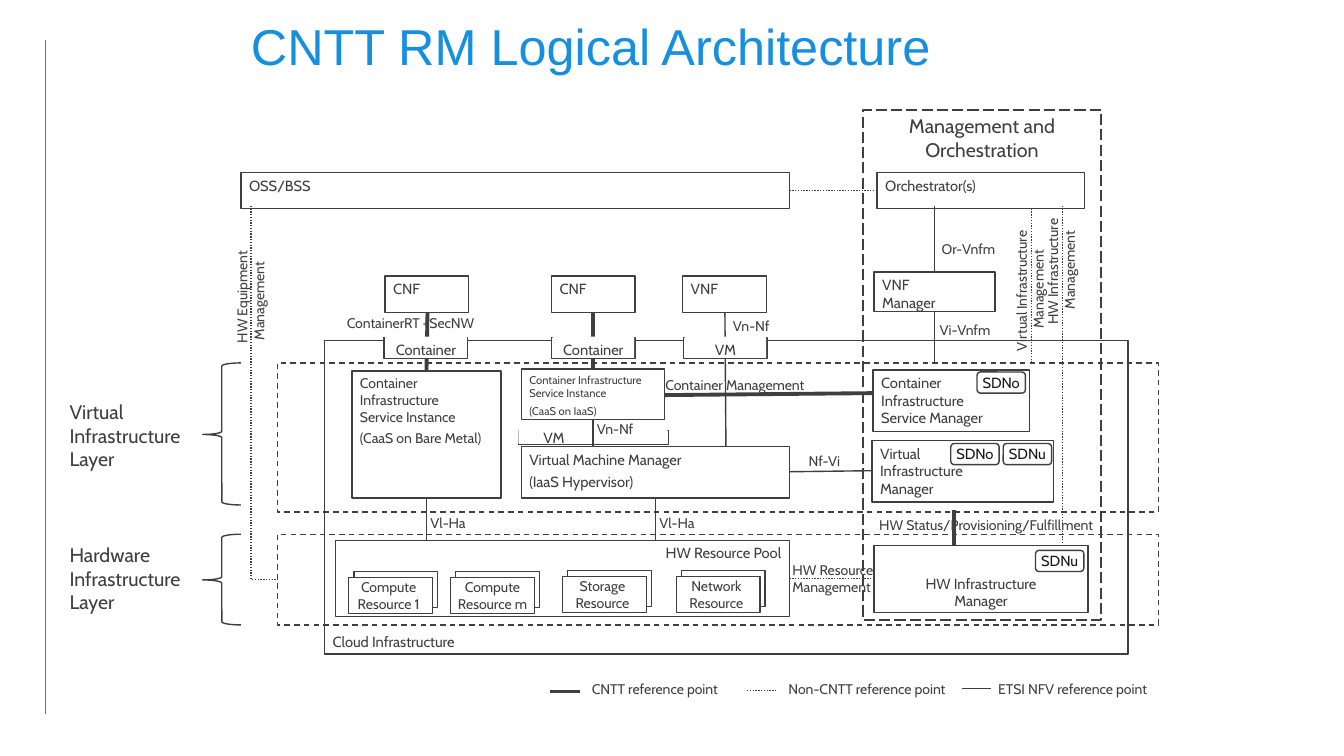
from pptx import Presentation
from pptx import util as u
from pptx.dml.color import RGBColor
from pptx.enum import dml, shapes, text
from lxml import etree

PX = 9144
INK = RGBColor(0x3F, 0x3F, 0x3F)
BLACK = RGBColor(0x18, 0x18, 0x18)
BLUE = RGBColor(0x16, 0x8F, 0xDF)
WHITE = RGBColor(0xFF, 0xFF, 0xFF)
A = "http://schemas.openxmlformats.org/drawingml/2006/main"
SHAPE = shapes.MSO_SHAPE
DOT, DASH = dml.MSO_LINE.ROUND_DOT, dml.MSO_LINE.DASH
LEFT, CENTER, RIGHT = text.PP_ALIGN.LEFT, text.PP_ALIGN.CENTER, text.PP_ALIGN.RIGHT
TOP, MIDDLE, BOTTOM = text.MSO_ANCHOR.TOP, text.MSO_ANCHOR.MIDDLE, text.MSO_ANCHOR.BOTTOM
THICK = 2.75


def write(sp, paragraphs, size, align, anchor, inset, wrap, color=INK, font="Cabin"):
    """Fill a shape with paragraphs in one style."""
    tf = sp.text_frame
    tf.word_wrap = wrap
    tf.vertical_anchor = anchor
    tf.margin_left, tf.margin_top, tf.margin_right, tf.margin_bottom = [i * PX for i in inset]
    for n, line in enumerate(paragraphs):
        p = tf.add_paragraph() if n else tf.paragraphs[0]
        p.text = line
        p.alignment = align
        if n and wrap:
            p.space_before = u.Pt(3)
        p.font.size = u.Pt(size)
        p.font.name = font
        p.font.color.rgb = color


def box(s, x, y, w, h, *paragraphs, size=10.5, align=LEFT, anchor=TOP, inset=(8, 4, 8, 4),
        fill=None, line=INK, dash=None, kind=SHAPE.RECTANGLE, color=INK):
    """Draw a preset shape with optional text."""
    sp = s.shapes.add_shape(kind, x * PX, y * PX, w * PX, h * PX)
    sp.shadow.inherit = False
    if fill is None:
        sp.fill.background()
    else:
        sp.fill.solid()
        sp.fill.fore_color.rgb = fill
    if line is None:
        sp.line.fill.background()
    else:
        sp.line.color.rgb = line
        sp.line.width = u.Pt(1)
        sp.line.dash_style = dash
    write(sp, paragraphs, size, align, anchor, inset, True, color)
    return sp


def label(s, x, y, w, h, *paragraphs, size=10, align=LEFT, turn=0):
    """Place an unwrapped text label."""
    sp = s.shapes.add_textbox(x * PX, y * PX, w * PX, h * PX)
    sp.rotation = turn
    write(sp, paragraphs, size, align, TOP, (8, 4, 8, 4), False)


def link(s, x1, y1, x2, y2, width=1, dash=None, color=INK):
    """Draw a straight connector."""
    c = s.shapes.add_connector(shapes.MSO_CONNECTOR.STRAIGHT, x1 * PX, y1 * PX, x2 * PX, y2 * PX)
    c.line.color.rgb = color
    c.line.width = u.Pt(width)
    c.line.dash_style = dash
    etree.SubElement(c._element.spPr, f"{{{A}}}effectLst")


def heading(s, x, y):
    """Draw the title and the rule at the left edge."""
    link(s, x, y, x, y + 668, 0.5, color=BLUE)
    sp = s.shapes.add_textbox((x + 194) * PX, (y - 42) * PX, 1196 * PX, 102 * PX)
    write(sp, ["CNTT RM Logical Architecture"], 36, LEFT, MIDDLE, (10, 5, 10, 5), True, BLUE, "Arial")
    sp.text_frame.paragraphs[0].line_spacing = 0.9


def badge(s, x, y, name):
    """Draw a rounded controller badge."""
    box(s, x, y, 48, 21, name, align=CENTER, anchor=MIDDLE, inset=(4, 4, 4, 4), fill=WHITE,
        kind=SHAPE.ROUNDED_RECTANGLE, color=BLACK)


def layer(s, x, y, h, brace_h, text_y, name):
    """Draw a dashed layer band with its brace and name."""
    box(s, x + 214, y, 874, h, dash=DASH)
    brace = box(s, x + 140, y, 38, brace_h, kind=SHAPE.LEFT_BRACE)
    brace.adjustments[0], brace.adjustments[1] = 0.083, 0.504
    label(s, x, y + text_y, 170, 69, f"{name}\nInfrastructure\nLayer", size=14)


def operations(s, x, y):
    """Draw OSS/BSS and its dotted links."""
    box(s, x, y, 544, 36, "OSS/BSS")
    link(s, x + 544, y + 18, x + 631, y + 18, dash=DOT)
    path = s.shapes.build_freeform((x + 10) * PX, (y + 33) * PX)
    path.add_line_segments([((x + 10) * PX, (y + 404) * PX), ((x + 36) * PX, (y + 404) * PX)], close=False)
    sp = path.convert_to_shape()
    sp.shadow.inherit = False
    sp.fill.background()
    sp.line.color.rgb = INK
    sp.line.width = u.Pt(1)
    sp.line.dash_style = DOT
    label(s, x - 46, y + 102, 110, 41, "HW Equipment", " Management", turn=270)


def workload(s, x, y, name, host, tab_x):
    """Draw a network function above its host tab."""
    box(s, x, y, 83, 36, name)
    box(s, x + tab_x, y + 61, 83, 21, fill=WHITE)
    box(s, x + tab_x + 1, y + 60, 81, 21, host, align=CENTER, fill=WHITE, line=None)


def resource_pool(s, x, y):
    """Draw the hardware resource pool."""
    resources = [(13, 37, "Compute\nResource 1", 4), (114, 37, "Compute\nResource m", 0),
                 (225, 36, "Storage\nResource", 4), (338, 36, "Network\nResource", 4)]
    for dx, dy, name, pad in resources:
        box(s, x + dx + 5, y + dy - 6, 83, 36)
        box(s, x + dx, y + dy, 83, 36, name, size=10, align=CENTER, anchor=MIDDLE,
            inset=(pad, pad, pad * 2, pad), fill=WHITE)
    box(s, x, y, 450, 76, "HW Resource Pool", align=RIGHT)
    link(s, x + 450, y + 38, x + 534, y + 38, dash=DOT)
    label(s, x + 445, y + 17, 110, 38, "HW Resource\nManagement")


def cloud(s, x, y):
    """Draw the cloud infrastructure with its workloads."""
    box(s, x + 192, y + 89, 149, 14, fill=WHITE)
    box(s, x + 192, y + 87, 148, 15, "VM", inset=(25, 0, 8, 0), fill=WHITE, line=None)
    box(s, x, y, 797, 311, "Cloud Infrastructure", anchor=BOTTOM)
    instance = "Container Infrastructure\nService Instance"
    box(s, x + 27, y + 30, 148, 126, instance, "(CaaS on Bare Metal)", size=10)
    box(s, x + 195, y + 28, 142, 50, instance, "(CaaS on IaaS)", size=8)
    box(s, x + 195, y + 105, 266, 51, "Virtual Machine Manager", "(IaaS Hypervisor)")
    resource_pool(s, x + 11, y + 198)
    link(s, x + 102, y - 28, x + 101, y + 30, THICK)
    link(s, x + 266, y - 28, x + 266, y + 28, THICK)
    link(s, x + 397, y - 28, x + 398, y + 105)
    link(s, x + 266, y + 79, x + 266, y + 105)
    link(s, x + 337, y + 54, x + 544, y + 52, THICK)
    link(s, x + 461, y + 130, x + 543, y + 129)
    for dx, text_x in [(101, 97), (328, 324)]:
        link(s, x + dx, y + 155, x + dx, y + 198)
        label(s, x + text_x, y + 168, 70, 17, "Vl-Ha")
    for dx, dy, w, name in [(397, -27, 70, "Vn-Nf"), (262, 75, 70, "Vn-Nf"), (472, 107, 70, "Nf-Vi"),
                            (14, -30, 160, "ContainerRT +SecNW"), (330, 31, 175, "Container Management")]:
        label(s, x + dx, y + dy, w, 21, name)
    for dx, name, host, tab_x in [(60, "CNF", "Container", -1), (225, "CNF", "Container", 0),
                                  (355, "VNF", "VM", 1)]:
        workload(s, x + dx, y - 64, name, host, tab_x)


def management(s, x, y):
    """Draw the management and orchestration column."""
    box(s, x, y, 236, 506, "Management and Orchestration", size=14, align=CENTER,
        dash=dml.MSO_LINE.LONG_DASH)
    box(s, x + 14, y + 62, 206, 36, "Orchestrator(s)")
    box(s, x + 11, y + 161, 120, 39, "VNF\nManager")
    box(s, x + 10, y + 258, 155, 61, "Container\nInfrastructure\nService Manager")
    box(s, x + 9, y + 328, 180, 61, "Virtual\nInfrastructure\nManager")
    box(s, x + 11, y + 432, 212, 67, "HW Infrastructure\nManager", align=CENTER, anchor=BOTTOM,
        inset=(8, 4, 8, 3))
    for dx, dy, name in [(113, 260, "SDNo"), (87, 331, "SDNo"), (139, 331, "SDNu"), (171, 437, "SDNu")]:
        badge(s, x + dx, y + dy, name)
    for x1, y1, y2, width, dash in [(71, 95, 161, 1, None), (71, 201, 252, 1, None),
                                    (167, 98, 251, 1, DOT), (198, 95, 433, 1, DOT),
                                    (90, 397, 432, THICK, None)]:
        link(s, x + x1, y + y1, x + x1, y + y2, width, dash)
    for dx, dy, w, name in [(70, 126, 80, "Or-Vnfm"), (68, 206, 80, "Vi-Vnfm"),
                            (8, 399, 250, "HW Status/Provisioning/Fulfillment")]:
        label(s, x + dx, y + dy, w, 15, name)
    for dx, dy, name in [(90, 159, "Virtual Infrastructure"), (121, 140, "HW Infrastructure")]:
        label(s, x + dx, y + dy, 150, 41, name, " Management", align=CENTER, turn=270)


def legend(s, x, y):
    """Draw the key to the line styles."""
    for dx, dy, text_x, width, dash, name in [(0, 15, 33, THICK, None, "CNTT reference point"),
                                              (195, 14, 228, 1, DOT, "Non-CNTT reference point"),
                                              (408, 12, 436, 1, None, "ETSI NFV reference point")]:
        link(s, x + dx, y + dy, x + dx + 29, y + dy, width, dash)
        label(s, x + text_x, y, 190, 21, name)


def main():
    """Build the slide and save it."""
    prs = Presentation()
    prs.slide_width, prs.slide_height = 1333 * PX, 750 * PX
    s = prs.slides.add_slide(prs.slide_layouts[6])
    heading(s, 45, 40)
    operations(s, 239, 171)
    cloud(s, 322, 338)
    management(s, 856, 109)
    layer(s, 61, 360, 148, 141, 33, "Virtual")
    layer(s, 61, 530, 90, 90, 5, "Hardware")
    legend(s, 546, 671)
    prs.save("out.pptx")


if __name__ == "__main__":
    main()
